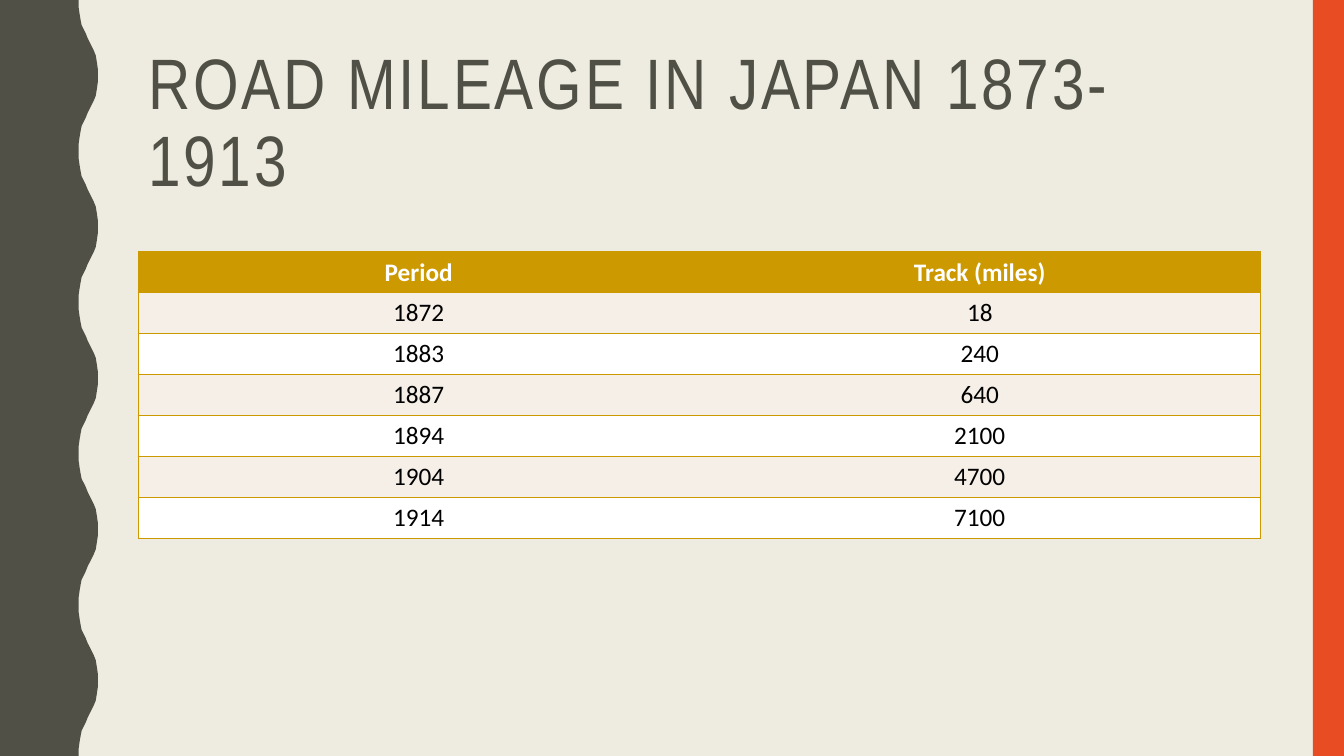
from lxml import etree
from pptx import Presentation
from pptx.dml.color import RGBColor
from pptx.enum.shapes import MSO_SHAPE
from pptx.enum.text import MSO_ANCHOR, MSO_AUTO_SIZE, PP_ALIGN
from pptx.oxml.ns import qn
from pptx.util import Pt

RECT = MSO_SHAPE.RECTANGLE
MIDDLE = MSO_ANCHOR.MIDDLE
LEFT, CENTER = PP_ALIGN.LEFT, PP_ALIGN.CENTER
NO_AUTOFIT = MSO_AUTO_SIZE.NONE

PX = 9144  # EMU, 100 px to the inch
WIDTH, HEIGHT = 1333, 750
GRAY, ORANGE, GOLD = "505046", "E84C22", "CC9900"
CREAM, BAND, WHITE, BLACK = "EEECE1", "F6EFE7", "FFFFFF", "000000"
NO_STYLE = "{2D5ABB26-0587-4C30-8999-92F81FD0307C}"

WAVE_PERIOD = 150
HALF_WAVE = [(78, 0), (78, 7), (79, 14), (80, 20), (81, 25), (83, 29), (85, 33),
             (87, 38), (89, 42), (91, 46), (93, 50), (95, 55), (96, 61), (97, 68),
             (97, 75)]

ROWS = [("Period", "Track (miles)"), ("1872", "18"), ("1883", "240"),
        ("1887", "640"), ("1894", "2100"), ("1904", "4700"), ("1914", "7100")]


def rgb(color):
    return RGBColor.from_string(color)


def emu(*lengths):
    return [n * PX for n in lengths]


def paint(sp, color):
    sp.shadow.inherit = False
    sp.fill.solid()
    sp.fill.fore_color.rgb = rgb(color)
    sp.line.fill.background()


def write(tf, text, size, font, color, bold=False, align=LEFT, line_spacing=None,
          tracking=None):
    """Put one formatted run in a text frame; tracking is in points."""
    p = tf.paragraphs[0]
    p.alignment = align
    if line_spacing:
        p.line_spacing = line_spacing
    r = p.add_run()
    r.text = text
    r.font.size, r.font.name, r.font.bold = Pt(size), font, bold
    r.font.color.rgb = rgb(color)
    if tracking is not None:
        r.font._element.set("spc", str(tracking * 100))


def add_wavy_edge(slide, left, top, height):
    wave = HALF_WAVE + [(x, WAVE_PERIOD - y) for x, y in HALF_WAVE[-2::-1]]
    points = [(left + x, top + start + y)
              for start in range(0, height, WAVE_PERIOD) for x, y in wave]
    builder = slide.shapes.build_freeform(left, top, scale=PX)
    builder.add_line_segments(points + [(left, top + height)], close=True)
    paint(builder.convert_to_shape(), GRAY)


def add_side_bar(slide, *box):
    paint(slide.shapes.add_shape(RECT, *emu(*box)), ORANGE)


def add_title(slide, text, *box):
    sp = slide.shapes.title
    sp.left, sp.top, sp.width, sp.height = emu(*box)
    tf = sp.text_frame
    tf.word_wrap = True
    tf.auto_size = NO_AUTOFIT
    tf.vertical_anchor = MIDDLE
    write(tf, text, 51, "Arial Narrow", GRAY, line_spacing=0.9, tracking=2)


def set_borders(cell, sides):
    """Draw gold cell borders; sides are in schema order L, R, T, B."""
    tc_pr = cell._tc.get_or_add_tcPr()
    for i, side in enumerate(sides):
        ln = etree.Element(qn(f"a:ln{side}"), w=str(Pt(1)))
        fill = etree.SubElement(ln, qn("a:solidFill"))
        etree.SubElement(fill, qn("a:srgbClr"), val=GOLD)
        tc_pr.insert(i, ln)


def add_mileage_table(slide, rows, *box):
    columns = len(rows[0])
    table = slide.shapes.add_table(len(rows), columns, *emu(*box)).table
    table.horz_banding = False
    table._tbl.tblPr.find(qn("a:tableStyleId")).text = NO_STYLE
    for i, row in enumerate(rows):
        header = i == 0
        fill = GOLD if header else BAND if i % 2 else WHITE
        for j, text in enumerate(row):
            cell = table.cell(i, j)
            cell.fill.solid()
            cell.fill.fore_color.rgb = rgb(fill)
            set_borders(cell, "LTB" if j == 0 else "RTB")
            write(cell.text_frame, text, 18, "Calibri", WHITE if header else BLACK,
                  bold=header, align=CENTER)


def main():
    prs = Presentation()
    prs.slide_width, prs.slide_height = emu(WIDTH, HEIGHT)
    slide = prs.slides.add_slide(prs.slide_layouts[5])
    slide.background.fill.solid()
    slide.background.fill.fore_color.rgb = rgb(CREAM)
    add_wavy_edge(slide, 0, 0, HEIGHT)
    add_side_bar(slide, WIDTH - 31, 0, 31, HEIGHT)
    add_title(slide, "ROAD MILEAGE IN JAPAN 1873-1913", 137, 42, 1113, 163)
    add_mileage_table(slide, ROWS, 137, 250, 1113, 284)
    prs.save("out.pptx")


if __name__ == "__main__":
    main()
